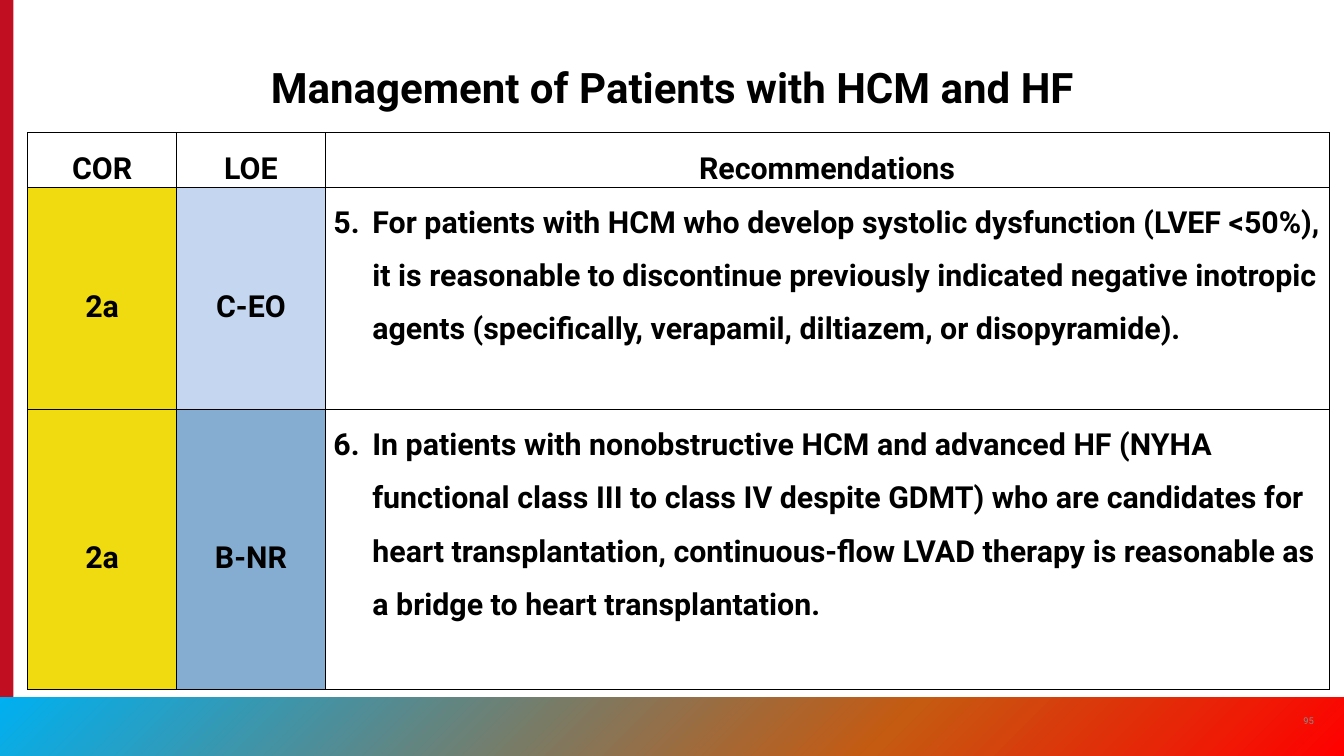
from copy import deepcopy

from lxml import etree
from pptx import Presentation
from pptx.dml.color import RGBColor
from pptx.enum.shapes import MSO_SHAPE
from pptx.enum.text import MSO_ANCHOR, PP_ALIGN
from pptx.oxml.ns import qn
from pptx.util import Cm, Pt

RECT = MSO_SHAPE.RECTANGLE
TOP, MIDDLE = MSO_ANCHOR.TOP, MSO_ANCHOR.MIDDLE
LEFT, CENTER = PP_ALIGN.LEFT, PP_ALIGN.CENTER

COLORS = {
    "text": "000000",
    "number": "8A8B8A",
    "strip": "C10E21",
    "2a": "F0DA10",
    "C-EO": "C4D6F0",
    "B-NR": "85ADD1",
}
BAND_STOPS = [(0, "00B0F0"), (0.66, "C55A11"), (1, "FF0000")]
COLUMN_WIDTHS = [4.5, 4.5, 30.35]
ROW_HEIGHTS = [1.55, 6.73, 8.46]
ROWS = [
    ("COR", "LOE", "Recommendations"),
    ("2a", "C-EO",
     "5.\tFor patients with HCM who develop systolic dysfunction (LVEF <50%), "
     "it is reasonable to discontinue previously indicated negative inotropic "
     "agents (specifically, verapamil, diltiazem, or disopyramide)."),
    ("2a", "B-NR",
     "6.\tIn patients with nonobstructive HCM and advanced HF (NYHA "
     "functional class III to class IV despite GDMT) who are candidates for "
     "heart transplantation, continuous-flow LVAD therapy is reasonable as "
     "a bridge to heart transplantation."),
]


def write(tf, text, size=26, color="text", bold=True, align=CENTER):
    p = tf.paragraphs[0]
    p.alignment = align
    r = p.add_run()
    r.text = text
    r.font.name = "Roboto"
    r.font.size = Pt(size)
    r.font.bold = bold
    r.font.color.rgb = RGBColor.from_string(COLORS[color])
    return p


def add_borders(cell):
    tcPr = cell._tc.get_or_add_tcPr()
    for side in ("a:lnL", "a:lnR", "a:lnT", "a:lnB"):
        ln = etree.SubElement(tcPr, qn(side), w=str(Pt(1)))
        fill = etree.SubElement(ln, qn("a:solidFill"))
        etree.SubElement(fill, qn("a:srgbClr"), val=COLORS["text"])


prs = Presentation()
prs.slide_width, prs.slide_height = Cm(40.64), Cm(22.86)
s = prs.slides.add_slide(prs.slide_layouts[6])

# Red strip on the left and gradient band at the bottom
strip = s.shapes.add_shape(RECT, 0, 0, Cm(0.41), prs.slide_height)
strip.fill.solid()
strip.fill.fore_color.rgb = RGBColor.from_string(COLORS["strip"])

band = s.shapes.add_shape(RECT, 0, Cm(21.08), prs.slide_width, Cm(1.78))
band.fill.gradient()
band.fill.gradient_angle = 315
first_stop = band._element.spPr.find(".//" + qn("a:gs"))
first_stop.addnext(deepcopy(first_stop))
for stop, (position, color) in zip(band.fill.gradient_stops, BAND_STOPS):
    stop.position = position
    stop.color.rgb = RGBColor.from_string(color)

for sp in (strip, band):
    sp.shadow.inherit = False
    sp.line.fill.background()

# Slide number
tf = s.shapes.add_textbox(Cm(38.96), Cm(21.18), Cm(1.22), Cm(1.22)).text_frame
tf.word_wrap = True
tf.vertical_anchor = MIDDLE
write(tf, "95", size=8, color="number", bold=False)

# Recommendations table
table = s.shapes.add_table(len(ROWS), len(COLUMN_WIDTHS), Cm(0.84), Cm(4.01),
                           Cm(sum(COLUMN_WIDTHS)), Cm(sum(ROW_HEIGHTS))).table
for column, width in zip(table.columns, COLUMN_WIDTHS):
    column.width = Cm(width)
for row, height, texts in zip(table.rows, ROW_HEIGHTS, ROWS):
    row.height = Cm(height)
    for cell, text in zip(row.cells, texts):
        is_item = "\t" in text
        cell.margin_left = cell.margin_right = 0
        cell.margin_top = cell.margin_bottom = 0
        cell.vertical_anchor = TOP if is_item else MIDDLE
        p = write(cell.text_frame, text, align=LEFT if is_item else CENTER)
        p.line_spacing = 1.5
        if is_item:
            pPr = p._p.get_or_add_pPr()
            pPr.set("marL", str(Cm(1.42)))
            pPr.set("indent", str(Cm(-1.18)))
        add_borders(cell)
        if text in COLORS:
            cell.fill.solid()
            cell.fill.fore_color.rgb = RGBColor.from_string(COLORS[text])
        else:
            cell.fill.background()

# Title
tf = s.shapes.add_textbox(Cm(4.83), Cm(1.73), Cm(31.01), Cm(1.8)).text_frame
tf.word_wrap = True
write(tf, "Management of Patients with HCM and HF", size=36)

prs.save("out.pptx")
